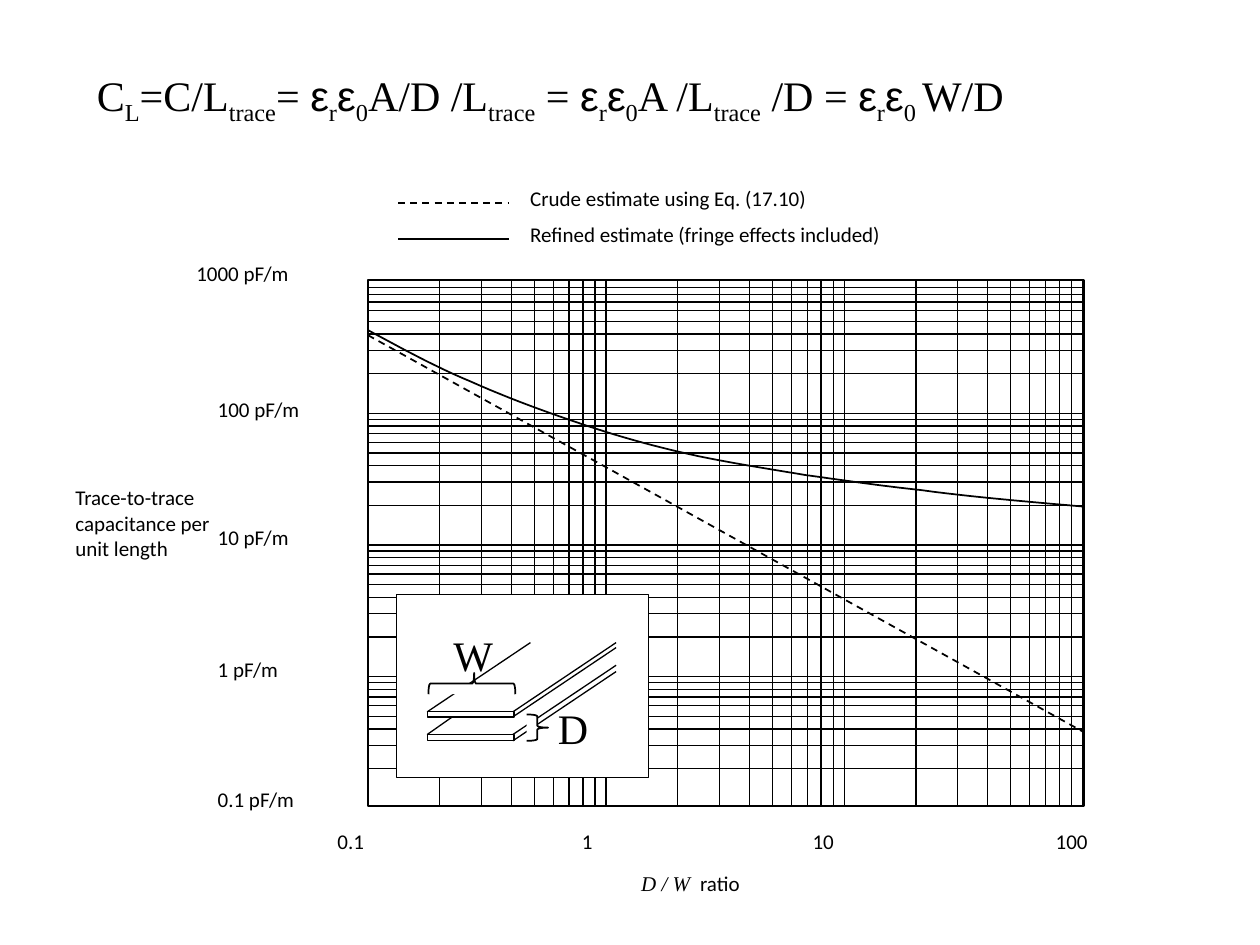
from itertools import groupby
from math import log10

from lxml import etree
from pptx import Presentation
from pptx.dml.color import RGBColor
from pptx.enum.dml import MSO_LINE_DASH_STYLE as DASH
from pptx.enum.shapes import MSO_CONNECTOR as CONN, MSO_SHAPE as SHAPE
from pptx.enum.text import MSO_AUTO_SIZE as FIT
from pptx.oxml.ns import qn
from pptx.util import Inches, Pt

# The slide is a grid of 100 columns by 75 rows; every length is in cells.
COLS, ROWS = 100, 75
SANS, SERIF, GREEK = "Calibri", "Times New Roman", "Arial"
BLACK, WHITE = "000000", "FFFFFF"


def cell(n):
    return Inches(n * 10 / COLS)


def color(hex_text):
    return RGBColor.from_string(hex_text)


def stroke(line, width, dash=False):
    line.color.rgb = color(BLACK)
    line.width = Pt(width)
    if dash:
        line.dash_style = DASH.DASH


def add_line(s, x1, y1, x2, y2, width=0.75, dash=False):
    c = s.shapes.add_connector(CONN.STRAIGHT, *map(cell, (x1, y1, x2, y2)))
    stroke(c.line, width, dash)
    etree.SubElement(c._element.spPr, qn("a:effectLst"))


def add_shape(s, kind, box, width=0.75, fill=WHITE):
    sp = s.shapes.add_shape(kind, *map(cell, box))
    sp.shadow.inherit = False
    if fill:
        sp.fill.solid()
        sp.fill.fore_color.rgb = color(fill)
    else:
        sp.fill.background()
    stroke(sp.line, width)
    return sp


def add_run(p, text, base=0, **fmt):
    r = p.add_run()
    r.text = text
    for name, value in {"name": SANS, "size": Pt(12), **fmt}.items():
        setattr(r.font, name, value)
    r.font.color.rgb = color(BLACK)
    if base:
        r._r.get_or_add_rPr().set("baseline", str(base * 1000))


def add_text(s, box, *lines, wrap=True, **fmt):
    tf = s.shapes.add_textbox(*map(cell, box)).text_frame
    tf.word_wrap = wrap
    if not wrap:
        tf.auto_size = FIT.SHAPE_TO_FIT_TEXT
    for i, text in enumerate(lines):
        p = tf.add_paragraph() if i else tf.paragraphs[0]
        if text:
            add_run(p, text, **fmt)
    return tf


def bezier(start, curves, steps=12):
    """Points along a chain of cubic curves."""
    points = [start]
    for a, b, end in curves:
        for t in (i / steps for i in range(1, steps + 1)):
            weights = ((1 - t) ** 3, 3 * t * (1 - t) ** 2, 3 * t * t * (1 - t), t ** 3)
            points.append(tuple(sum(w * q[k] for w, q in zip(weights, (start, a, b, end)))
                                for k in (0, 1)))
        start = end
    return points


def equation(s, box):
    """Title formula; square brackets hold subscripts."""
    formula = ("C[L]=C/L[trace]= ε[r]ε[0]A/D /L[trace] = ε[r]ε[0]A /L[trace]"
               " /D = ε[r]ε[0 ]W/D")
    p = add_text(s, box, "", wrap=False).paragraphs[0]
    for i, part in enumerate(formula.split("[")):
        sub, _, rest = part.partition("]") if i else ("", "", part)
        if sub:
            add_run(p, sub, base=-25, name=SERIF, size=Pt(24))
        for greek, chars in groupby(rest, lambda ch: ch == "ε"):
            add_run(p, "".join(chars), name=GREEK if greek else SERIF, size=Pt(24))


def legend(s, box):
    x, y, w, h = box
    entries = [("Crude estimate using Eq. (17.10)", True),
               ("Refined estimate (fringe effects included)", False)]
    for i, (text, dash) in enumerate(entries):
        top = y + i * h / 2
        add_line(s, x, top + 1.9, x + 8.8, top + 1.9, 1, dash)
        add_text(s, (x + 9.5, top, w - 9.5, 3.9), text)


def plot(s, box):
    x, y, w, h = box
    right, bottom = x + w, y + h
    add_line(s, x, 26.6, right, 58.1, 1, True)  # crude estimate
    add_shape(s, SHAPE.RECTANGLE, box, 1.25, None)

    # Logarithmic grid: three decades across, four up
    dx, dy, base = 18.9, 10.45, bottom + 0.15
    for k in range(2, 30):
        decade, digit = divmod(k - 1, 9)
        if decade < 3:
            at = x + dx * (decade + log10(digit + 1))
            add_line(s, at, y, at, bottom)
    for k in range(1, 36):
        decade, digit = divmod(k, 9)
        at = base - dy * (decade + log10(digit + 1))
        add_line(s, x, at, right, at)

    # Refined estimate
    curves = [((31.8, 27.6), (34.5, 29.1), (37.4, 30.3)),
              ((40.3, 31.6), (43.6, 32.8), (46.6, 33.8)),
              ((49.6, 34.8), (52.6, 35.6), (55.4, 36.2)),
              ((58.3, 36.8), (60.9, 37.2), (63.9, 37.7)),
              ((66.8, 38.1), (69.4, 38.5), (73.1, 38.9)),
              ((76.7, 39.4), (81.3, 39.8), (85.9, 40.2))]
    points = [(cell(a), cell(b)) for a, b in bezier((x, 26.2), curves)]
    fb = s.shapes.build_freeform(*points[0])
    fb.add_line_segments(points[1:], close=False)
    sp = fb.convert_to_shape()
    sp.shadow.inherit = False
    sp.fill.background()
    stroke(sp.line, 1)


def axis_labels(s, box):
    x, y, w, h = box
    left = x - 12.9
    rows = [("1000 pF/m", left - 1.7, 20.2), ("100 pF/m", left, 31),
            ("10 pF/m", left, 41.1), ("1 pF/m", left, 51.6), ("0.1 pF/m", left, 61.9)]
    for text, at, top in rows:
        add_text(s, (at, top, 14, 3.9), text)
    add_text(s, (5, 38, 14.5, 13.7), "Trace-to-trace", "capacitance per unit length")

    below = y + h + 1.3
    for text, at in [("0.1", 25.8), ("1", 45.2), ("10", 63.5), ("100", 82.8)]:
        add_text(s, (at, below, 7.2, 3.9), text)
    tf = add_text(s, (49.9, below + 3.3, 16.2, 3.9), "D / W ", name=SERIF, italic=True)
    add_run(tf.paragraphs[0], " ratio")


def trace_sketch(s, box):
    """Two parallel plates with their width W and distance D."""
    x, y, w, h = box
    add_shape(s, SHAPE.RECTANGLE, box)
    near, far, rise, plate = x + 2.4, x + 9.2, 5.5, 8.2
    lower, upper = y + 11.1, y + 9.3
    for top, thick in ((lower, 0.5), (upper, 0.4)):
        add_shape(s, SHAPE.RECTANGLE, (near, top, 6.9, thick))
    add_line(s, near, lower, near + 2, lower - 1.4)
    for top in (lower, lower + 0.5, upper, upper + 0.4):
        add_line(s, far, top, far + plate, top - rise)
    add_line(s, near, upper, near + plate, upper - rise)

    brace = add_shape(s, SHAPE.RIGHT_BRACE, (x + 5.1, y + 3.6, 1.7, 6.9), 1)
    brace.rotation = 270
    brace.adjustments[1] = 0.526
    add_text(s, (x + 3.5, y + 2.3, 5.2, 5), "W", wrap=False, name=SERIF, size=Pt(24))
    add_shape(s, SHAPE.RIGHT_BRACE, (x + 10.3, y + 9.5, 1.7, 2.1), 1)
    add_text(s, (x + 11.8, y + 8.1, 4.5, 5), "D", wrap=False, name=SERIF, size=Pt(24))


def main():
    prs = Presentation()
    prs.slide_width, prs.slide_height = cell(COLS), cell(ROWS)
    s = prs.slides.add_slide(prs.slide_layouts[6])
    area = (29.2, 22.2, 56.8, 41.8)
    plot(s, area)
    axis_labels(s, area)
    legend(s, (31.6, 14.2, 50, 5.7))
    equation(s, (6.7, 5, 77.2, 9.1))
    trace_sketch(s, (31.5, 47.2, 20, 14.5))
    prs.save("out.pptx")


if __name__ == "__main__":
    main()
